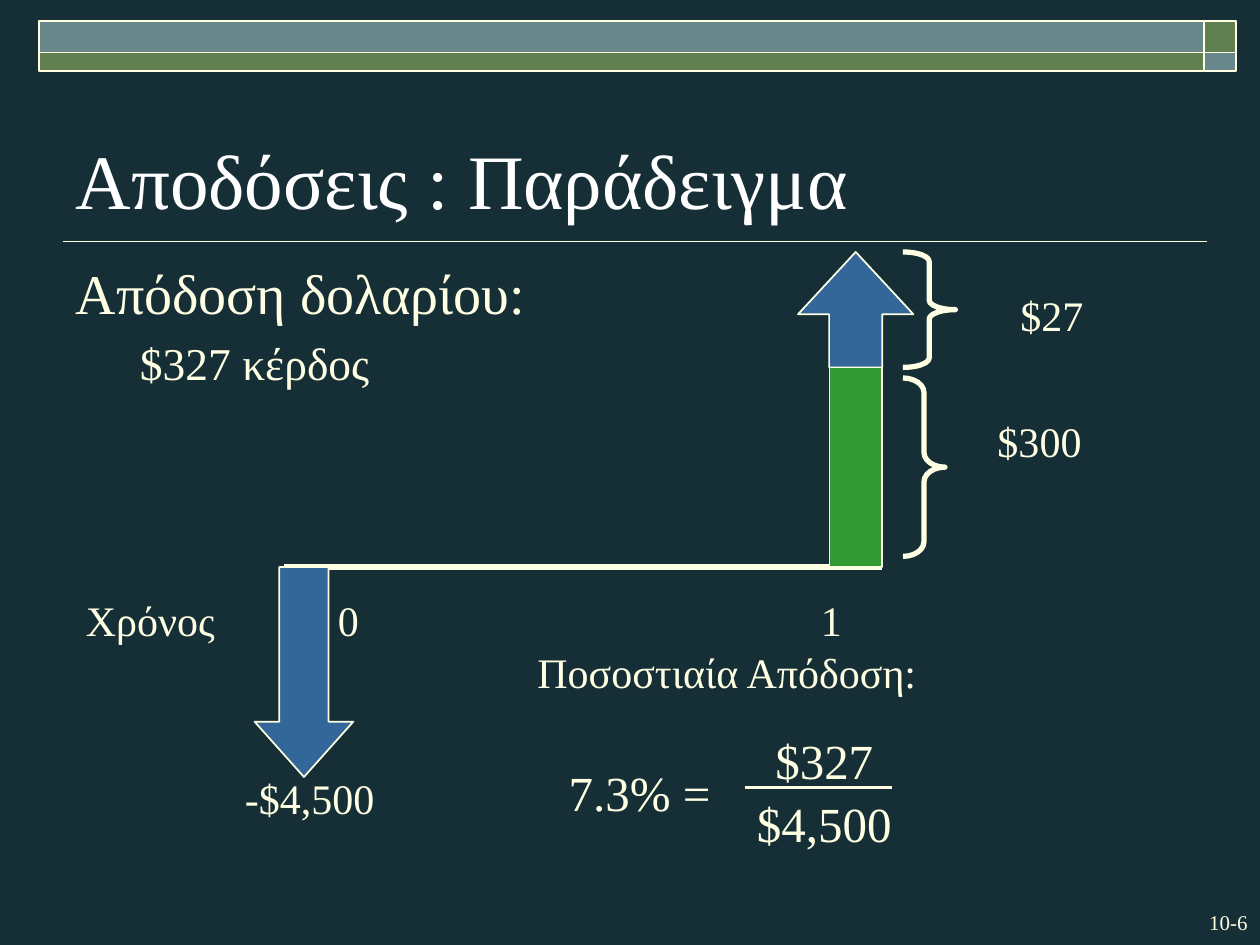
import dataclasses

import lxml.etree
import pptx
import pptx.dml.color
import pptx.enum.shapes
import pptx.enum.text
import pptx.oxml.ns
import pptx.util


@dataclasses.dataclass(frozen=True)
class Theme:
    font: str = "Times New Roman"
    background: str = "162E36"
    cream: str = "FFFFE3"
    white: str = "FFFFFF"
    teal: str = "69888B"
    olive: str = "618052"
    blue: str = "336699"
    green: str = "339933"
    title: int = 44
    heading: int = 32
    item: int = 26
    formula: int = 28
    label: int = 24
    page: int = 12


theme = Theme()
color = pptx.dml.color.RGBColor.from_string
Shapes = pptx.enum.shapes.MSO_SHAPE
Align = pptx.enum.text.PP_ALIGN

presentation = pptx.Presentation()
presentation.slide_width = pptx.util.Inches(10)
presentation.slide_height = pptx.util.Inches(7.5)
slide = presentation.slides.add_slide(presentation.slide_layouts[1])
slide.background.fill.solid()
slide.background.fill.fore_color.rgb = color(theme.background)

# The grid has 120 columns and 90 rows
unit = presentation.slide_width / 120


def grid(*cells):
    return [round(cell * unit) for cell in cells]


def set_font(paragraph, size, font_color=theme.cream):
    paragraph.font.name = theme.font
    paragraph.font.size = pptx.util.Pt(size)
    paragraph.font.color.rgb = color(font_color)


# Header band, outlined shapes of the cash-flow diagram
header = [
    (Shapes.RECTANGLE, (114.7, 2, 3, 3), theme.olive, 1, ()),
    (Shapes.RECTANGLE, (3.7, 2, 111, 3), theme.teal, 1, ()),
    (Shapes.RECTANGLE, (3.7, 5, 111, 1.8), theme.olive, 1, ()),
    (Shapes.RECTANGLE, (114.7, 5, 3, 1.8), theme.teal, 1, ()),
]
diagram = [
    (Shapes.DOWN_ARROW, (24.25, 54, 9.4, 20), theme.blue, 1, (0.5, 0.56)),
    (Shapes.UP_ARROW, (76, 24, 11, 11), theme.blue, 1, (0.46, 0.54)),
    (Shapes.RECTANGLE, (79, 35, 5, 19), theme.green, 1, ()),
    (Shapes.RIGHT_BRACE, (86, 36, 4, 17), None, 3, (0.35, 0.5)),
    (Shapes.RIGHT_BRACE, (86, 24, 5, 11), None, 3, (0.18, 0.5)),
]

# Title rule, time axis and fraction bar: start, end, row, width
lines = [(6, 115, 23, 1), (27, 84, 54, 3), (71, 85, 75, 1.5)]
for start, end, row, width in lines:
    line = slide.shapes.add_connector(
        pptx.enum.shapes.MSO_CONNECTOR.STRAIGHT, *grid(start, row, end, row))
    line.line.color.rgb = color(theme.cream)
    line.line.width = pptx.util.Pt(width)
    lxml.etree.SubElement(line._element.spPr, pptx.oxml.ns.qn("a:effectLst"))

for preset, box, fill, width, adjustments in header + diagram:
    shape = slide.shapes.add_shape(preset, *grid(*box))
    shape.shadow.inherit = False
    shape.line.color.rgb = color(theme.cream)
    shape.line.width = pptx.util.Pt(width)
    if fill:
        shape.fill.solid()
        shape.fill.fore_color.rgb = color(fill)
    else:
        shape.fill.background()
    for index, value in enumerate(adjustments):
        shape.adjustments[index] = value

# Title
title = slide.shapes.title
title.left, title.top, title.width, title.height = grid(6, 7, 108, 15)
title.text_frame.text = "Αποδόσεις : Παράδειγμα"
title.text_frame.auto_size = pptx.enum.text.MSO_AUTO_SIZE.NONE
title.text_frame.vertical_anchor = pptx.enum.text.MSO_ANCHOR.BOTTOM
title.text_frame.paragraphs[0].alignment = Align.LEFT
set_font(title.text_frame.paragraphs[0], theme.title, theme.white)

# Dollar return list, without bullets
body = slide.placeholders[1]
body.left, body.top, body.width, body.height = grid(6, 24, 65, 25.3)
body.text_frame.text = "Απόδοση δολαρίου:\n$327 κέρδος"
body.text_frame.auto_size = pptx.enum.text.MSO_AUTO_SIZE.NONE
levels = [(theme.heading, 0.51, -0.51), (theme.item, 0.99, -0.48)]
for level, (size, margin, indent) in enumerate(levels):
    paragraph = body.text_frame.paragraphs[level]
    paragraph.level = level
    set_font(paragraph, size)
    properties = paragraph._p.get_or_add_pPr()
    properties.set("marL", str(pptx.util.Inches(margin)))
    properties.set("indent", str(pptx.util.Inches(indent)))
    properties.insert(0, properties.makeelement(pptx.oxml.ns.qn("a:buNone")))

# Labels, percentage return and page number
labels = [
    ("Χρόνος", (7, 56, 17, 6), theme.label, Align.LEFT),
    ("0", (31, 56, 5, 6), theme.label, Align.LEFT),
    ("1", (77, 56, 5, 6), theme.label, Align.LEFT),
    ("-$4,500", (18, 73, 23, 6), theme.label, Align.CENTER),
    ("$300", (86, 39, 26, 6), theme.label, Align.CENTER),
    ("$27", (96, 27, 18, 6), theme.label, Align.LEFT),
    ("Ποσοστιαία Απόδοση:", (50, 61, 66, 6), theme.label, Align.LEFT),
    ("7.3% = ", (52, 72, 19, 6.8), theme.formula, Align.CENTER),
    ("$4,500", (70.5, 75, 16, 6.8), theme.formula, Align.CENTER),
    ("$327", (70.5, 69, 16, 6.8), theme.formula, Align.CENTER),
    ("10-6", (110, 86, 10, 3.6), theme.page, Align.RIGHT),
]
for text, box, size, alignment in labels:
    label = slide.shapes.add_textbox(*grid(*box))
    label.text_frame.word_wrap = True
    label.text_frame.text = text
    label.text_frame.paragraphs[0].alignment = alignment
    set_font(label.text_frame.paragraphs[0], size)

presentation.save("out.pptx")
